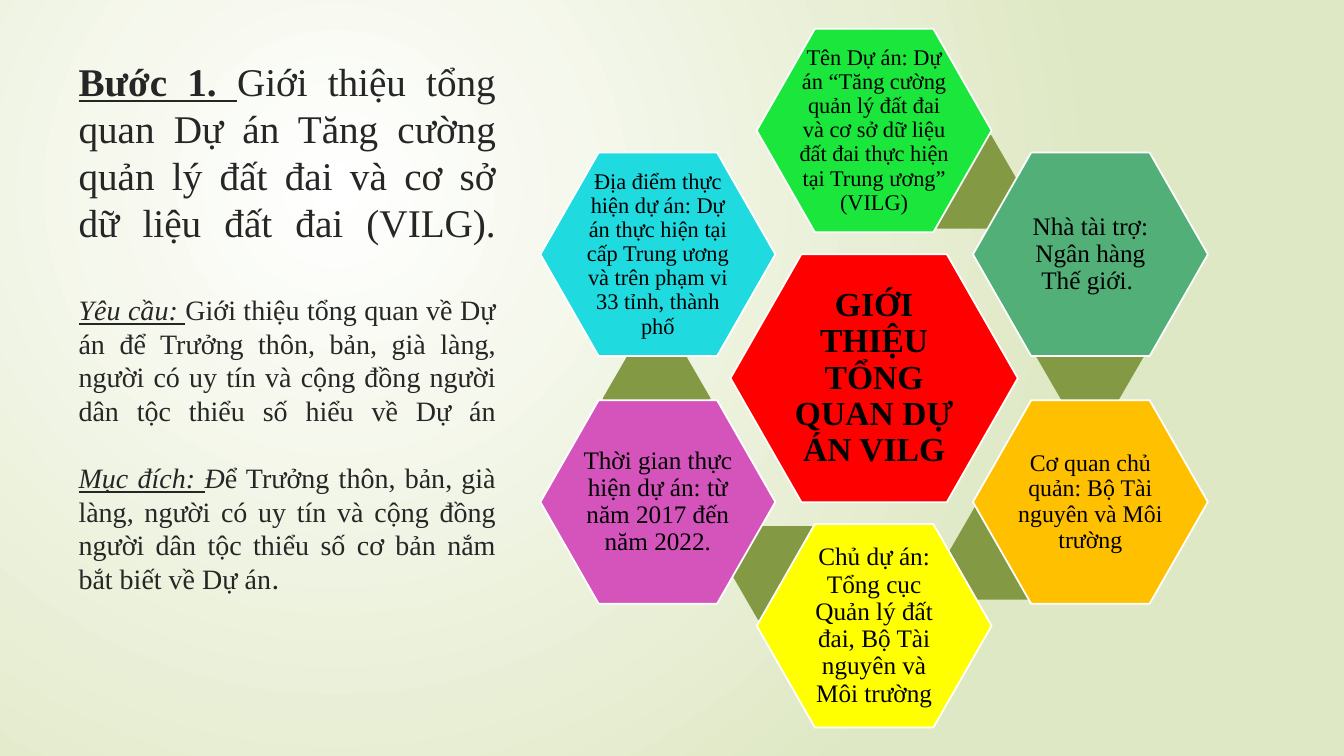
import copy

import lxml.etree
import pptx
import pptx.dml.color
import pptx.enum.shapes
import pptx.enum.text
import pptx.oxml
import pptx.oxml.ns
import pptx.util

Cm = pptx.util.Cm
Pt = pptx.util.Pt
qn = pptx.oxml.ns.qn

CENTRE = (22.03, 9.53)
RING_STEP = (5.45, 3.12)
RING_SIZE = (5.92, 5.13)
HUB_SIZE = (7.24, 6.25)
ACCENT_SIZE = (2.72, 2.36)

HUB_TEXT = "GIỚI THIỆU TỔNG QUAN DỰ ÁN VILG"
RING = [
    (0, -2, "1AE63C", 16, "Tên Dự án: Dự án “Tăng cường quản lý đất đai và cơ sở dữ liệu đất đai thực hiện tại Trung ương” (VILG)"),
    (1, -1, "51AF77", 18, "Nhà tài trợ: Ngân hàng Thế giới. "),
    (1, 1, "FFC000", 17, "Cơ quan chủ quản: Bộ Tài nguyên và Môi trường"),
    (0, 2, "FFFF00", 18, "Chủ dự án: Tổng cục Quản lý đất đai, Bộ Tài nguyên và Môi trường"),
    (-1, 1, "D454BC", 18, "Thời gian thực hiện dự án: từ năm 2017 đến năm 2022."),
    (-1, -1, "1FDADF", 16, "Địa điểm thực hiện dự án: Dự án thực hiện tại cấp Trung ương và trên phạm vi 33 tỉnh, thành phố"),
]
ACCENT_CENTRES = [(24.3, 4.58), (27.47, 8.98), (25.26, 13.93), (19.78, 14.44), (16.55, 10.04)]

INTRO = [
    ("Bước 1. ", dict(size=28, bold=True, underline=True), 0),
    ("Giới thiệu tổng quan Dự án Tăng cường quản lý đất đai và cơ sở dữ liệu đất đai (VILG).", dict(size=28), 2),
    ("Yêu cầu: ", dict(italic=True, underline=True), 0),
    ("Giới thiệu tổng quan về Dự án để Trưởng thôn, bản, già làng, người có uy tín và cộng đồng người dân tộc thiểu số hiểu về Dự án", {}, 2),
    ("Mục đích: ", dict(italic=True, underline=True), 0),
    ("Đ", dict(italic=True), 0),
    ("ể Trưởng thôn, bản, già làng, người có uy tín và cộng đồng người dân tộc thiểu số cơ bản nắm bắt biết về Dự án", {}, 0),
    (".", dict(font="League Spartan"), 0),
]


def colour(value):
    return pptx.dml.color.RGBColor.from_string(value)


def add_text(para, text, size=20, font="Times New Roman", ink="262626",
             bold=False, italic=False, underline=False):
    span = para.add_run()
    span.text = text
    span.font.size = Pt(size)
    span.font.name = font
    span.font.color.rgb = colour(ink)
    span.font.bold = bold
    span.font.italic = italic
    span.font.underline = underline
    return span


class SlideBuilder:
    accent = "839943"
    outline = "FFFFFF"
    outline_width = 1.25

    def __init__(self, page):
        self.page = page

    def background(self, inner, outer):
        fill = self.page.background.fill
        fill.gradient()
        for stop, value in zip(fill.gradient_stops, (inner, outer)):
            stop.color.rgb = colour(value)
        gradient = self.page.element.find(".//" + qn("a:gradFill"))
        gradient.remove(gradient.find(qn("a:lin")))
        shade = lxml.etree.SubElement(gradient, qn("a:path"), path="circle")
        lxml.etree.SubElement(shade, qn("a:fillToRect"),
                              l="50000", t="50000", r="100000", b="100000")

    def hexagon(self, centre, extent, fill, adjust=0.286):
        (x, y), (width, height) = centre, extent
        shape = self.page.shapes.add_shape(
            pptx.enum.shapes.MSO_SHAPE.HEXAGON,
            Cm(x - width / 2), Cm(y - height / 2), Cm(width), Cm(height))
        shape.adjustments[0] = adjust
        shape.shadow.inherit = False
        shape.fill.solid()
        shape.fill.fore_color.rgb = colour(fill)
        shape.line.fill.background()
        return shape

    def accent_hexagon(self, centre):
        self.hexagon(centre, ACCENT_SIZE, self.accent, adjust=0.289)

    def labelled_hexagon(self, centre, extent, fill, text, **style):
        shape = self.hexagon(centre, extent, fill)
        shape.line.color.rgb = colour(self.outline)
        shape.line.width = Pt(self.outline_width)
        frame = shape.text_frame
        frame.word_wrap = True
        frame.vertical_anchor = pptx.enum.text.MSO_ANCHOR.MIDDLE
        inset = Cm(0.05 if style["size"] < 18 else 0.08)
        frame.margin_left = frame.margin_right = inset
        frame.margin_top = frame.margin_bottom = inset
        para = frame.paragraphs[0]
        para.alignment = pptx.enum.text.PP_ALIGN.CENTER
        para.line_spacing = 0.9
        add_text(para, text, ink="000000", **style)

    def text_block(self, left, top, width, height, pieces):
        box = self.page.shapes.add_textbox(Cm(left), Cm(top), Cm(width), Cm(height))
        box.text_frame.word_wrap = True
        para = box.text_frame.paragraphs[0]
        para.alignment = pptx.enum.text.PP_ALIGN.JUSTIFY
        for text, style, breaks in pieces:
            span = add_text(para, text, **style)
            for _ in range(breaks):
                para.add_line_break()
                line_break = para._p.findall(qn("a:br"))[-1]
                line_break.append(copy.deepcopy(span.font._element))


def main():
    deck = pptx.Presentation()
    deck.slide_width = Cm(33.87)
    deck.slide_height = Cm(19.05)
    builder = SlideBuilder(deck.slides.add_slide(deck.slide_layouts[6]))
    builder.background("FFFFFF", "DFE8C4")
    builder.labelled_hexagon(CENTRE, HUB_SIZE, "FF0000", HUB_TEXT, size=24, bold=True)
    for centre in ACCENT_CENTRES:
        builder.accent_hexagon(centre)
    for column, row, fill, size, text in RING:
        centre = (CENTRE[0] + column * RING_STEP[0], CENTRE[1] + row * RING_STEP[1])
        builder.labelled_hexagon(centre, RING_SIZE, fill, text, size=size)
    builder.text_block(1.73, 1.32, 11.02, 17.2, INTRO)
    deck.save("out.pptx")


if __name__ == "__main__":
    main()
